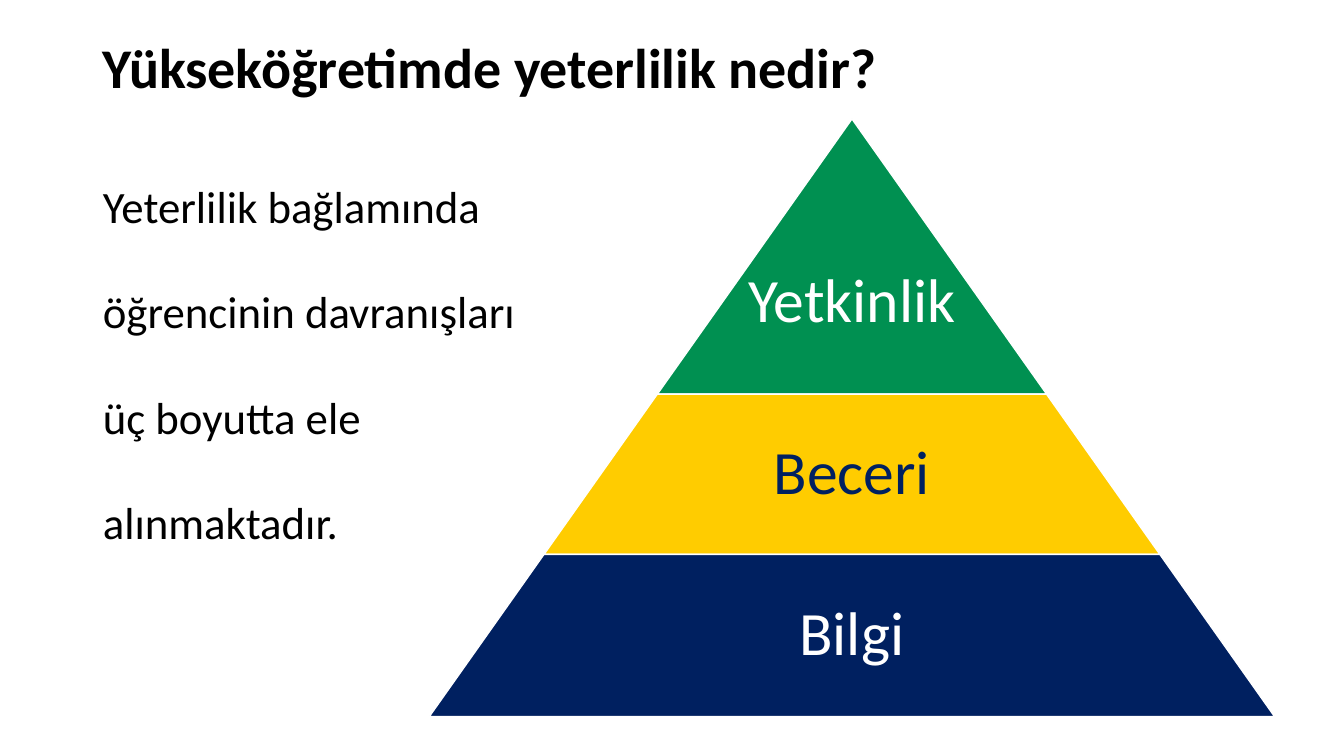
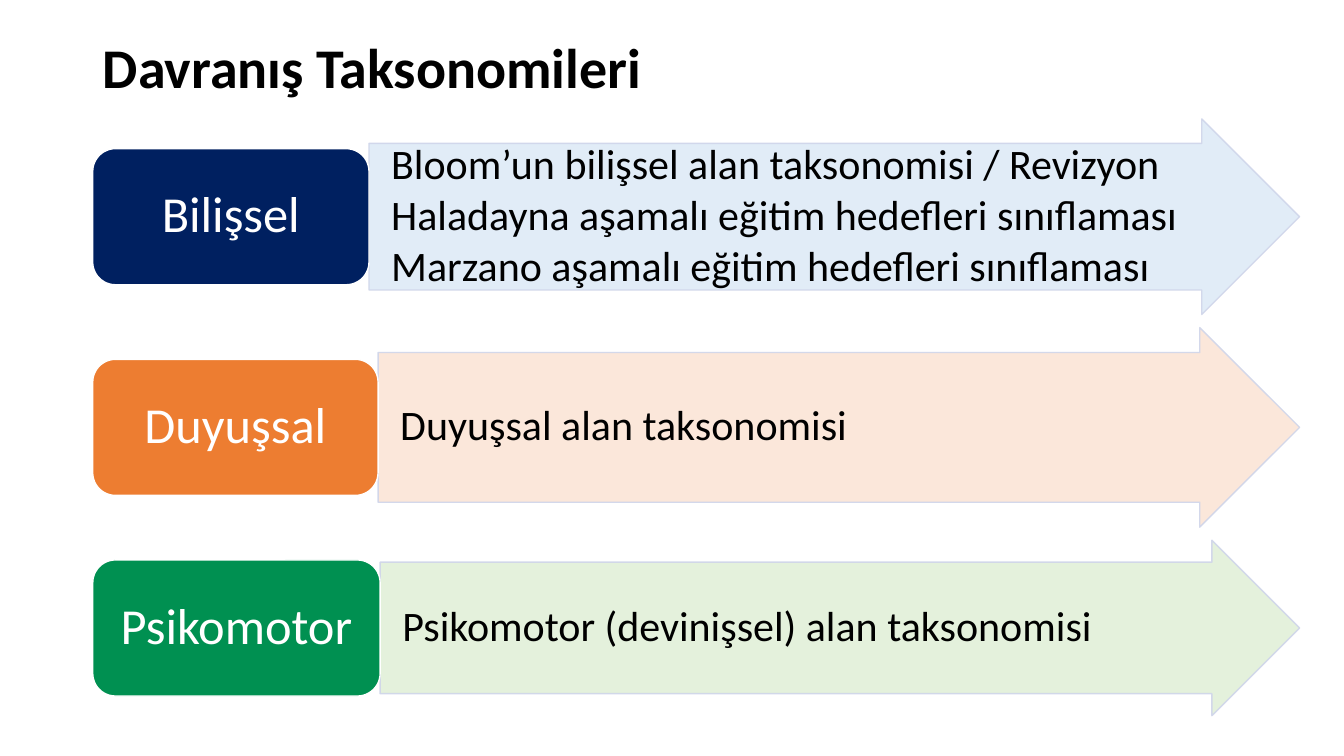
"""Builds two slides on qualifications and behaviour taxonomies."""
from pptx import Presentation
from pptx.dml.color import RGBColor
from pptx.enum.shapes import MSO_SHAPE
from pptx.enum.text import MSO_ANCHOR, MSO_AUTO_SIZE, PP_ALIGN
from pptx.oxml import parse_xml
from pptx.oxml.ns import nsdecls, qn
from pptx.util import Inches, Pt

FONT = "Calibri"
BLACK, WHITE, NAVY, GREEN = "000000", "FFFFFF", "002060", "009051"
GOLD, ORANGE, EDGE = "FFCC00", "ED7D31", "CFD5EA"

LEFT = 0.92
TITLES = ["Yükseköğretimde yeterlilik nedir?", "Davranış Taksonomileri"]
INTRO = "Yeterlilik bağlamında öğrencinin davranışları üç boyutta ele alınmaktadır."

APEX, MID, SLOPE = 1.18, 8.45, 0.707
TIERS = [
    ("Yetkinlik", GREEN, WHITE, 3.91),
    ("Beceri", GOLD, NAVY, 5.5),
    ("Bilgi", NAVY, WHITE, 7.11),
]

TIP, LABEL = 12.89, 1.35
ROWS = [
    ("Bilişsel", NAVY, "DEEBF7", 1.18, 1.94, 2.74, [
        "Bloom’un bilişsel alan taksonomisi / Revizyon",
        "Haladayna aşamalı eğitim hedefleri sınıflaması",
        "Marzano aşamalı eğitim hedefleri sınıflaması"]),
    ("Duyuşsal", ORANGE, "FBE5D6", 3.25, 1.98, 2.83,
     ["Duyuşsal alan taksonomisi"]),
    ("Psikomotor", GREEN, "E2F0D9", 5.36, 1.74, 2.85,
     ["Psikomotor (devinişsel) alan taksonomisi"]),
]


def rgb(code):
    return RGBColor.from_string(code)


def write(frame, lines, size, color, align=PP_ALIGN.LEFT, space=0.9,
          after=0, bold=False):
    frame.text = "\n".join(lines)
    for para in frame.paragraphs:
        para.alignment, para.line_spacing = align, space
        para.space_before, para.space_after = Pt(0), Pt(after)
        font = para.font
        font.name, font.size, font.bold = FONT, Pt(size), bold
        font.color.rgb = rgb(color)


def inset(frame, left, top, right, bottom):
    frame.margin_left, frame.margin_top = Inches(left), Inches(top)
    frame.margin_right, frame.margin_bottom = Inches(right), Inches(bottom)


def place(item, *box):
    item.left, item.top, item.width, item.height = map(Inches, box)


def block(slide, kind, box, fill, line=WHITE):
    shape = slide.shapes.add_shape(kind, *map(Inches, box))
    shape.shadow.inherit = False
    shape.fill.solid()
    shape.fill.fore_color.rgb = rgb(fill)
    shape.line.color.rgb = rgb(line)
    shape.line.width = Pt(1)
    shape.text_frame.vertical_anchor = MSO_ANCHOR.MIDDLE
    return shape


def fade(shape, share):
    for color in shape.element.spPr.iter(qn("a:srgbClr")):
        color.append(parse_xml(
            f'<a:alpha {nsdecls("a")} val="{share * 1000}"/>'))


def start(deck, layout, title):
    slide = deck.slides.add_slide(deck.slide_layouts[layout])
    head = slide.shapes.title
    place(head, LEFT, 0.21, 11.5, 0.97)
    write(head.text_frame, [title], 40, BLACK, bold=True)
    head.text_frame.vertical_anchor = MSO_ANCHOR.MIDDLE
    head.text_frame.auto_size = MSO_AUTO_SIZE.NONE
    return slide


def pyramid(deck):
    slide = start(deck, 1, TITLES[0])
    body = slide.placeholders[1]
    place(body, LEFT, 1.21, 4.36, 5.93)
    write(body.text_frame, [INTRO], 32, BLACK, space=1.96)
    body.text_frame.auto_size = MSO_AUTO_SIZE.NONE
    props = body.text_frame.paragraphs[0]._p.get_or_add_pPr()
    props.set("marL", "0")
    props.set("indent", "0")
    props.insert_element_before(
        parse_xml(f'<a:buNone {nsdecls("a")}/>'), "a:tabLst", "a:defRPr")

    top = APEX
    for name, fill, color, base in TIERS:
        high, wide = base - top, 2 * SLOPE * (base - APEX)
        tier = block(slide, MSO_SHAPE.TRAPEZOID,
                     (MID - wide / 2, top, wide, high), fill)
        tier.adjustments[0] = SLOPE
        lift = 0 if top == APEX else 2 * SLOPE * high ** 2 / (3 * wide)
        frame = tier.text_frame
        inset(frame, 0, 0, 0, lift)
        frame.word_wrap = False
        write(frame, [name], 44, color, PP_ALIGN.CENTER)
        top = base


def arrows(deck):
    slide = start(deck, 5, TITLES[1])
    for name, dark, pale, top, high, wide, lines in ROWS:
        edge = LEFT + wide
        arrow = block(slide, MSO_SHAPE.RIGHT_ARROW,
                      (edge, top, TIP - edge, high), pale, EDGE)
        arrow.adjustments[0] = 0.75
        fade(arrow, 90)
        inset(arrow.text_frame, 0.22, 0.02, 0.02, 0.02)
        write(arrow.text_frame, lines, 30, BLACK, after=4)

        label = block(slide, MSO_SHAPE.ROUNDED_RECTANGLE,
                      (LEFT, top + (high - LABEL) / 2, wide, LABEL), dark)
        inset(label.text_frame, 0.15, 0.07, 0.15, 0.07)
        write(label.text_frame, [name], 36, WHITE, PP_ALIGN.CENTER)


def main():
    deck = Presentation()
    deck.slide_width, deck.slide_height = Inches(13.33), Inches(7.5)
    pyramid(deck)
    arrows(deck)
    deck.save("out.pptx")


if __name__ == "__main__":
    main()
